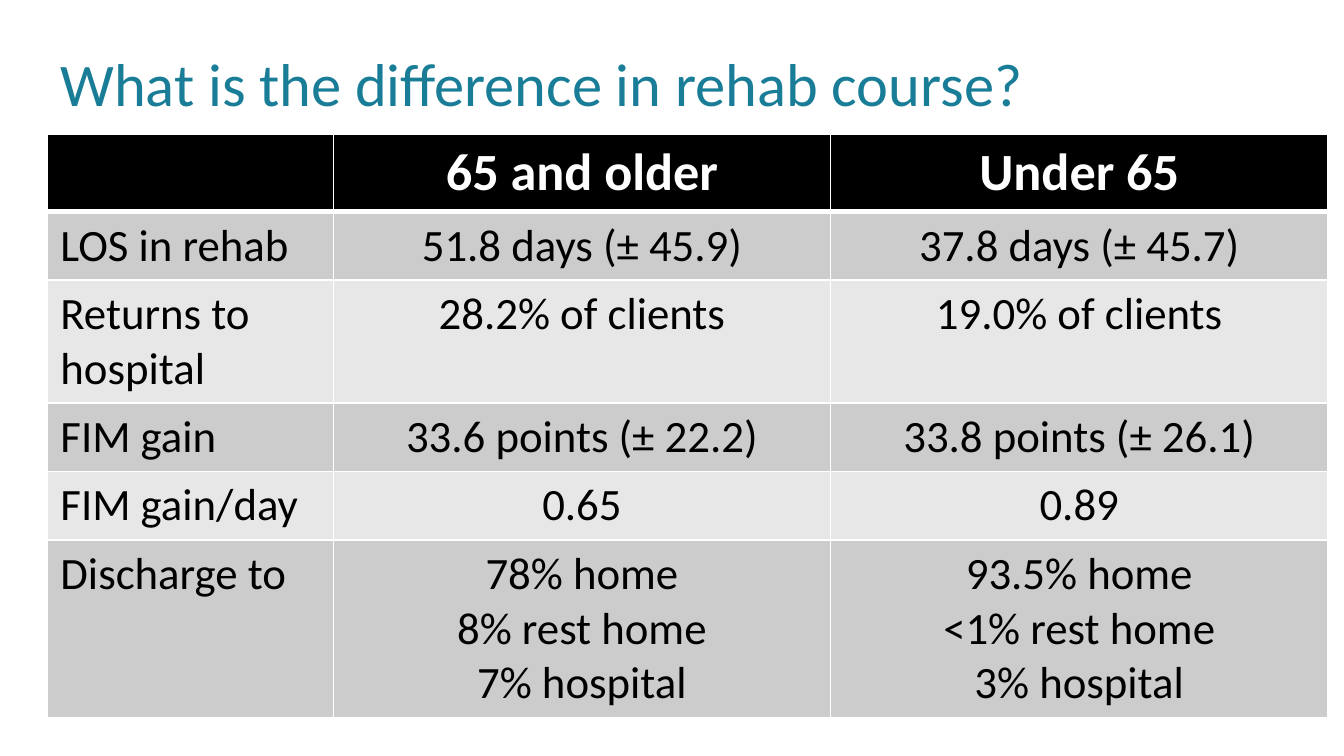
from dataclasses import dataclass

from lxml import etree
from pptx import Presentation
from pptx import util as u
from pptx.dml.color import RGBColor
from pptx.enum import text
from pptx.oxml import ns

TEAL = RGBColor(0x19, 0x7D, 0x97)
BLACK = RGBColor(0x00, 0x00, 0x00)
WHITE = RGBColor(0xFF, 0xFF, 0xFF)
BANDS = (RGBColor(0xCC, 0xCC, 0xCC), RGBColor(0xE7, 0xE7, 0xE7))

WIDTH = u.Inches(10)
HEIGHT = WIDTH * 9 // 16  # widescreen
LEFT = u.Inches(0.35)
TABLE_TOP = u.Inches(1)
COLUMNS = [u.Inches(w) for w in (2.13, 3.7, 3.7)]


@dataclass
class Row:
    height: float
    cells: tuple[str, str, str]


ROWS = [
    Row(0.57, ("", "65 and older", "Under 65")),
    Row(0.51, ("LOS in rehab", "51.8 days (± 45.9)", "37.8 days (± 45.7)")),
    Row(0.91, ("Returns to hospital", "28.2% of clients", "19.0% of clients")),
    Row(0.51, ("FIM gain", "33.6 points (± 22.2)", "33.8 points (± 26.1)")),
    Row(0.51, ("FIM gain/day", "0.65", "0.89")),
    Row(1.31, ("Discharge to", "78% home\n8% rest home\n7% hospital",
               "93.5% home\n<1% rest home\n3% hospital")),
]

TITLE_FONT = {"name": "Calibri", "size": u.Pt(32.4), "bold": False}
HEAD_FONT = {"name": "Calibri", "size": u.Pt(28), "bold": True}
BODY_FONT = {"name": "Calibri", "size": u.Pt(24), "bold": False}


def format_text(tf, font: dict, color: RGBColor, align) -> None:
    for p in tf.paragraphs:
        p.alignment = align
        for r in p.runs:
            for name, value in font.items():
                setattr(r.font, name, value)
            r.font.color.rgb = color


def set_borders(cell, widths: dict[str, float]) -> None:
    """Put white borders before the fill, in left, right, top, bottom order."""
    tc_pr = cell._tc.get_or_add_tcPr()
    for i, (side, width) in enumerate(widths.items()):
        ln = etree.Element(ns.qn(f"a:ln{side}"), w=str(u.Pt(width)))
        fill = etree.SubElement(ln, ns.qn("a:solidFill"))
        etree.SubElement(fill, ns.qn("a:srgbClr"), val=str(WHITE))
        tc_pr.insert(i, ln)


def add_title(s, title: str) -> None:
    sp = s.shapes.title
    box = {"left": LEFT, "top": u.Inches(0.23),
           "width": int(WIDTH * 0.74), "height": u.Inches(0.77)}
    for name, value in box.items():
        setattr(sp, name, value)
    tf = sp.text_frame
    tf.text = title
    tf.word_wrap = True
    tf.auto_size = text.MSO_AUTO_SIZE.NONE
    tf.vertical_anchor = text.MSO_ANCHOR.MIDDLE
    format_text(tf, TITLE_FONT, TEAL, text.PP_ALIGN.LEFT)


def add_comparison(s, rows: list[Row]) -> None:
    height = u.Inches(sum(row.height for row in rows))
    table = s.shapes.add_table(len(rows), len(COLUMNS), LEFT, TABLE_TOP,
                               sum(COLUMNS), height).table
    for column, width in zip(table.columns, COLUMNS):
        column.width = width
    for i, row in enumerate(rows):
        table.rows[i].height = u.Inches(row.height)
        is_head = i == 0
        for j, content in enumerate(row.cells):
            cell = table.cell(i, j)
            cell.text = content
            cell.fill.solid()
            cell.fill.fore_color.rgb = BLACK if is_head else BANDS[(i - 1) % 2]
            set_borders(cell, {"L": 1, "R": 1, "T": 3 if i == 1 else 1,
                               "B": 3 if is_head else 1})
            format_text(cell.text_frame,
                        HEAD_FONT if is_head else BODY_FONT,
                        WHITE if is_head else BLACK,
                        text.PP_ALIGN.CENTER if j else text.PP_ALIGN.LEFT)


def main() -> None:
    prs = Presentation()
    prs.slide_width, prs.slide_height = WIDTH, HEIGHT
    s = prs.slides.add_slide(prs.slide_layouts[5])  # title only
    add_title(s, "What is the difference in rehab course?")
    add_comparison(s, ROWS)
    prs.save("out.pptx")


if __name__ == "__main__":
    main()
